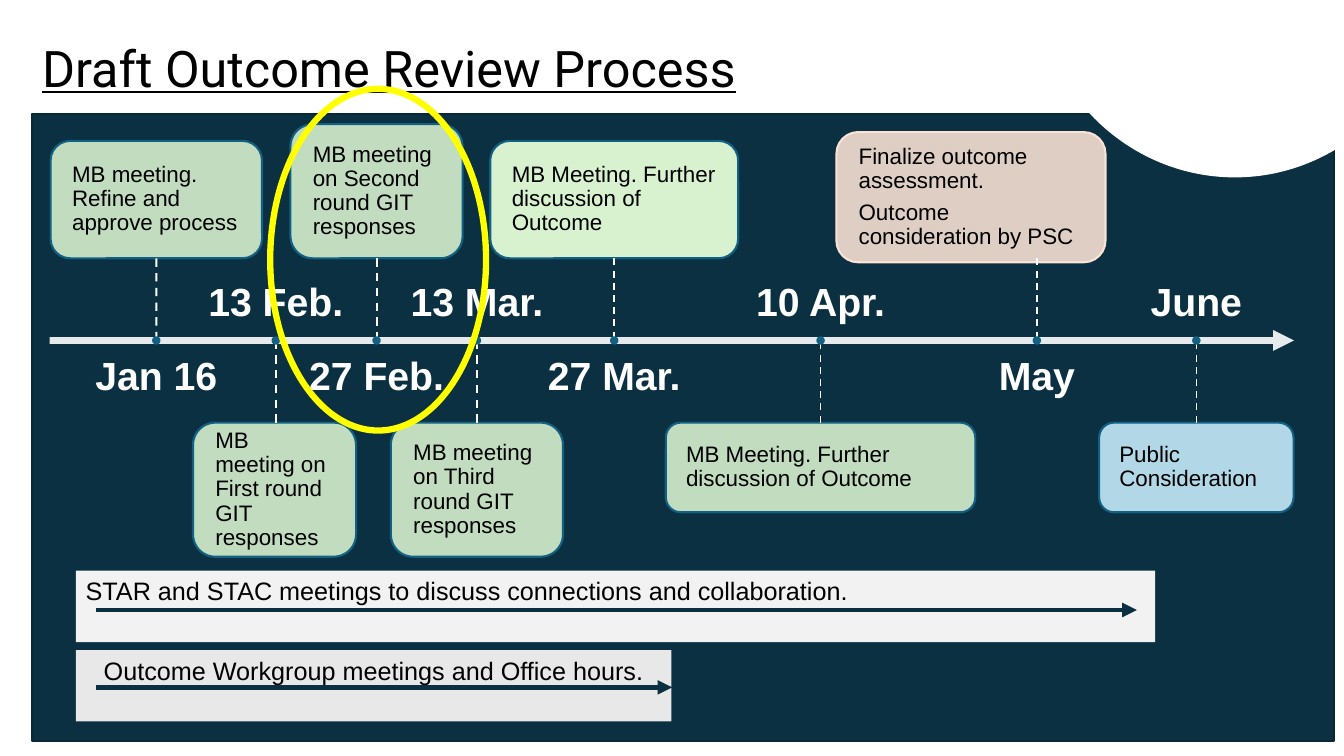
from lxml import etree
from pptx import Presentation
from pptx.dml.color import RGBColor
from pptx.enum.dml import MSO_LINE
from pptx.enum.shapes import MSO_CONNECTOR, MSO_SHAPE
from pptx.enum.text import MSO_ANCHOR, MSO_AUTO_SIZE, PP_ALIGN
from pptx.oxml.ns import qn
from pptx.util import Cm, Pt

RECT, ROUND, OVAL = MSO_SHAPE.RECTANGLE, MSO_SHAPE.ROUNDED_RECTANGLE, MSO_SHAPE.OVAL
STRAIGHT, DASH = MSO_CONNECTOR.STRAIGHT, MSO_LINE.DASH
TOP, MIDDLE, BOTTOM = MSO_ANCHOR.TOP, MSO_ANCHOR.MIDDLE, MSO_ANCHOR.BOTTOM
LEFT, CENTER = PP_ALIGN.LEFT, PP_ALIGN.CENTER
NO_FIT = MSO_AUTO_SIZE.NONE

BLACK = RGBColor(0x00, 0x00, 0x00)
WHITE = RGBColor(0xFF, 0xFF, 0xFF)
NAVY = RGBColor(0x0A, 0x30, 0x41)
EDGE = RGBColor(0x08, 0x28, 0x36)
TEAL = RGBColor(0x12, 0x60, 0x82)
GREEN = RGBColor(0xD8, 0xF2, 0xCF)
PEACH = RGBColor(0xFA, 0xE2, 0xD5)
SKY = RGBColor(0xC7, 0xED, 0xFC)
PALE = RGBColor(0xF2, 0xF2, 0xF2)
GREY = RGBColor(0xE8, 0xE8, 0xE8)
YELLOW = RGBColor(0xFF, 0xFF, 0x00)

# Timeline levels in cm: cards above end at ROOF, cards below start at FLOOR
AXIS, ROOF, FLOOR = 8.58, 6.51, 10.65
DOT = 0.16
LABEL_W, LABEL_H, LABEL_GAP = 3.84, 1.22, 0.4

# Date, x, card centre, card width, card height, fill, line, opaque, dash width, text
# Cards alternate above and below the axis, starting above
EVENTS = [
    ("Jan 16", 3.94, 3.94, 5.33, 2.96, GREEN, TEAL, False, 1.5,
     ["MB meeting. Refine and approve process"]),
    ("13 Feb.", 6.95, 6.92, 4.11, 3.38, GREEN, TEAL, False, 1.5,
     ["MB meeting on First round GIT responses"]),
    ("27 Feb.", 9.49, 9.49, 4.34, 3.38, GREEN, TEAL, False, 1.5,
     ["MB meeting on Second round GIT responses"]),
    ("13 Mar.", 12.02, 12.02, 4.34, 3.38, GREEN, TEAL, False, 1.5,
     ["MB meeting on Third round GIT responses"]),
    ("27 Mar.", 15.48, 15.48, 6.25, 2.96, GREEN, TEAL, True, 1.25,
     ["MB Meeting. Further discussion of Outcome"]),
    ("10 Apr.", 20.68, 20.68, 7.8, 2.26, GREEN, TEAL, False, 1.25,
     ["MB Meeting. Further discussion of Outcome"]),
    ("May", 26.13, 24.47, 6.78, 3.28, PEACH, PEACH, False, 1.25,
     ["Finalize outcome assessment.", "Outcome consideration by PSC"]),
    ("June", 30.15, 30.15, 4.9, 2.26, SKY, TEAL, False, 1.25,
     ["Public Consideration"]),
]

# Text, top, width, fill, alignment, arrow end, arrow level
BARS = [
    ("STAR and STAC meetings to discuss connections and collaboration.",
     14.38, 27.2, PALE, LEFT, 28.65, 15.37),
    ("Outcome Workgroup meetings and Office hours.",
     16.38, 15.01, GREY, CENTER, 16.94, 17.32),
]


def fade(shape):
    """Make the first colour of a shape or line 89 % opaque."""
    color = next(shape._element.spPr.iter(qn("a:srgbClr")))
    etree.SubElement(color, qn("a:alpha")).set("val", "89000")


def add_form(slide, kind, x, y, w, h, fill=None, line=None, width=1.5):
    form = slide.shapes.add_shape(kind, Cm(x), Cm(y), Cm(w), Cm(h))
    form.shadow.inherit = False
    if fill is None:
        form.fill.background()
    else:
        form.fill.solid()
        form.fill.fore_color.rgb = fill
    if line is None:
        form.line.fill.background()
    else:
        form.line.color.rgb = line
        form.line.width = Pt(width)
    return form


def add_line(slide, x1, y1, x2, y2, color, width, dash=None, arrow=False):
    line = slide.shapes.add_connector(STRAIGHT, Cm(x1), Cm(y1), Cm(x2), Cm(y2))
    line.line.color.rgb = color
    line.line.width = Pt(width)
    if dash is not None:
        line.line.dash_style = dash
    if arrow:
        ln = line.line._get_or_add_ln()
        etree.SubElement(ln, qn("a:tailEnd")).set("type", "triangle")
    etree.SubElement(line._element.spPr, qn("a:effectLst"))
    return line


def write(shape, texts, size, color=BLACK, font="Arial", bold=False,
          align=LEFT, anchor=MIDDLE, inset=(0.25, 0.13), spacing=0.9):
    frame = shape.text_frame
    frame.word_wrap = True
    frame.auto_size = NO_FIT
    frame.vertical_anchor = anchor
    frame.margin_left = frame.margin_right = Cm(inset[0])
    frame.margin_top = frame.margin_bottom = Cm(inset[1])
    for i, text in enumerate(texts):
        para = frame.paragraphs[0] if i == 0 else frame.add_paragraph()
        para.text = text
        para.alignment = align
        para.line_spacing = spacing
        para.space_before = Pt(5.6 if i else 0)
        para.font.name = font
        para.font.size = Pt(size)
        para.font.bold = bold
        para.font.color.rgb = color


def add_title(slide, text):
    title = slide.shapes.title
    title.left, title.top = Cm(0.81), Cm(0.86)
    title.width, title.height = Cm(23.47), Cm(1.85)
    write(title, [text], 36, font="Roboto")
    title.text_frame.paragraphs[0].font.underline = True


def add_event(slide, above, date, x, mid, w, h, fill, edge, opaque, dash, texts):
    # Date on the side away from the card
    y = AXIS + LABEL_GAP if above else AXIS - LABEL_GAP - LABEL_H
    label = slide.shapes.add_textbox(
        Cm(x - LABEL_W / 2), Cm(y), Cm(LABEL_W), Cm(LABEL_H))
    write(label, [date], 28, WHITE, bold=True, align=CENTER,
          anchor=TOP if above else BOTTOM, inset=(0, 0))

    # Card
    y = ROOF - h if above else FLOOR
    if mid != x and above:
        y += 0.1
    card = add_form(slide, ROUND, mid - w / 2, y, w, h, fill, edge)
    if not opaque:
        fade(card)
    write(card, texts, 16, inset=(0.4, 0.4))

    # Dashed stem and dot on the axis
    stem = add_line(slide, x, ROOF if above else FLOOR, x, AXIS, WHITE, dash, DASH)
    if mid == x:
        stem.begin_connect(card, 2 if above else 0)
    add_form(slide, OVAL, x - DOT / 2, AXIS - DOT / 2, DOT, DOT, TEAL, TEAL)


def add_bar(slide, text, y, w, fill, align, end, level):
    bar = add_form(slide, RECT, 1.91, y, w, 1.8, fill)
    write(bar, [text], 18, align=align, anchor=TOP, spacing=1.0)
    add_line(slide, 2.42, level, end, level, NAVY, 3.5, arrow=True)


def main():
    deck = Presentation()
    deck.slide_width, deck.slide_height = Cm(33.87), Cm(19.05)
    slide = deck.slides.add_slide(deck.slide_layouts[5])

    # Title and dark panel
    add_title(slide, "Draft Outcome Review Process")
    add_form(slide, RECT, 0.81, 2.87, 32.82, 15.8, NAVY, EDGE)

    # Timeline
    fade(add_line(slide, 1.25, AXIS, 32.61, AXIS, WHITE, 5, arrow=True))
    for i, event in enumerate(EVENTS):
        add_event(slide, i % 2 == 0, *event)

    # Ongoing meetings
    for bar in BARS:
        add_bar(slide, *bar)

    # White corner and yellow highlight
    add_form(slide, OVAL, 26.04, -6.05, 10.16, 10.52, WHITE)
    add_form(slide, OVAL, 6.81, 2.24, 5.44, 8.61, line=YELLOW, width=4.5)

    deck.save("out.pptx")


if __name__ == "__main__":
    main()
